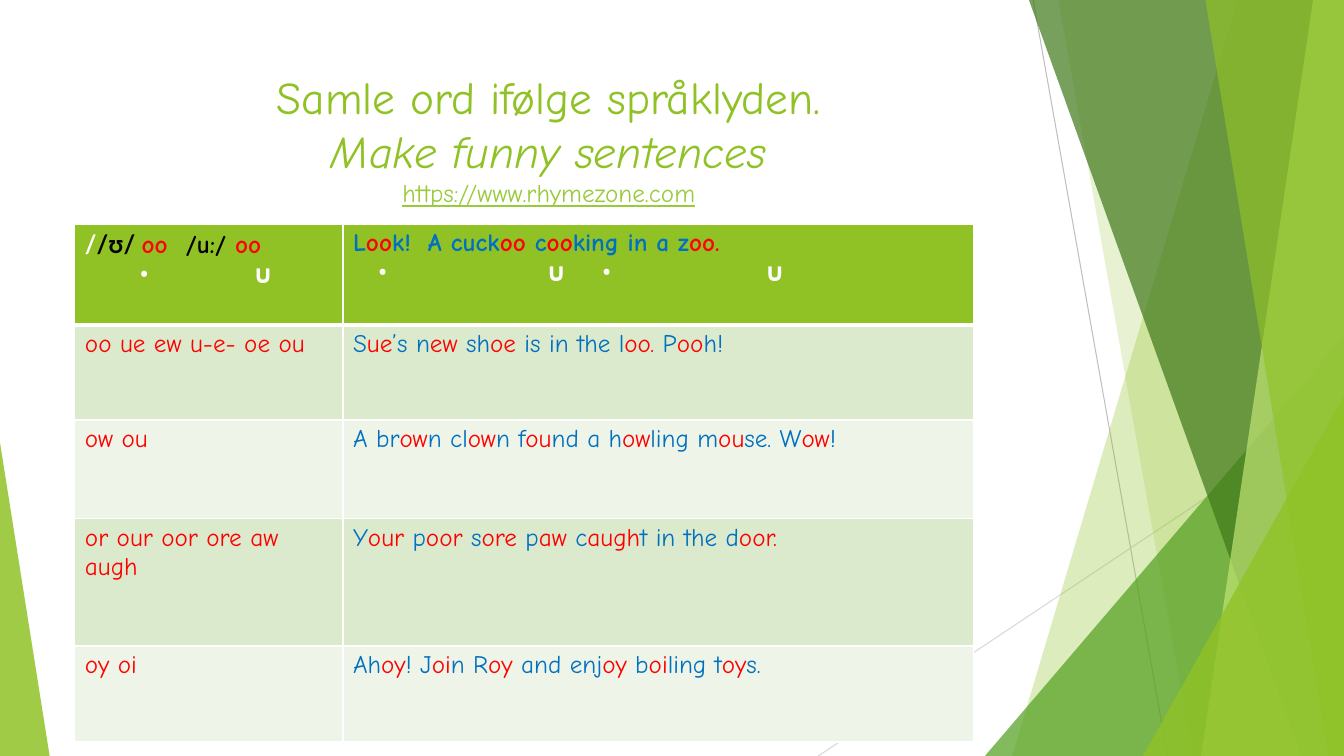
from lxml import etree
from pptx import Presentation
from pptx.dml.color import RGBColor
from pptx.enum import shapes, text
from pptx.oxml import ns
from pptx.util import Pt

GREEN = RGBColor(0x90, 0xC2, 0x26)
LEAF = RGBColor(0x54, 0xA0, 0x21)
FOREST = RGBColor(0x3F, 0x78, 0x19)
LIME = RGBColor(0xC0, 0xE4, 0x74)
LINK = RGBColor(0x99, 0xCA, 0x3C)
BAND_DARK = RGBColor(0xDB, 0xE9, 0xCD)
BAND_LIGHT = RGBColor(0xEE, 0xF4, 0xE8)
GREY = RGBColor(0xBF, 0xBF, 0xBF)
PALE_GREY = RGBColor(0xD9, 0xD9, 0xD9)
WHITE = RGBColor(0xFF, 0xFF, 0xFF)
BLACK = RGBColor(0, 0, 0)
RED = RGBColor(0xFF, 0, 0)
BLUE = RGBColor(0, 0x70, 0xC0)
HAND, MARKS, PHONETIC = "Comic Neue", "Roboto", "Lato"
WIDTH, HEIGHT = 960, 540

# Spellings, then a sentence in which every second piece is red
SOUNDS = [
    ("oo ue ew u-e- oe ou", "S|ue|’s n|ew| sh|oe| is in the l|oo. |P|oo|h!"),
    ("ow ou", "A br|ow|n cl|ow|n f|ou|nd a h|ow|ling m|ou|se. W|ow|!"),
    ("or our oor ore aw augh",
     "Y|our| p|oor| s|ore| p|aw| c|augh|t in the d|oor."),
    ("oy oi", "Ah|oy|! J|oi|n R|oy| and enj|oy| b|oi|ling t|oy|s."),
]


def add_child(parent, tag, **attributes):
    return etree.SubElement(parent, ns.qn(tag), attributes)


def paint(shape, color, opacity):
    shape.shadow.inherit = False
    shape.line.fill.background()
    shape.fill.solid()
    shape.fill.fore_color.rgb = color
    fill = shape._element.spPr.find(ns.qn("a:solidFill"))
    add_child(fill[0], "a:alpha", val=str(opacity * 1000))


def add_ray(page, start, end, color):
    ray = page.shapes.add_connector(
        shapes.MSO_CONNECTOR.STRAIGHT, *(Pt(v) for v in start + end))
    ray.line.color.rgb = color
    ray.line.width = Pt(0.75)
    add_child(ray._element.spPr, "a:effectLst")


def add_facet(page, top_x, bottom_x, color, opacity):
    """Fill from a slanted left edge to the right side of the slide."""
    builder = page.shapes.build_freeform(Pt(top_x), 0)
    builder.add_line_segments(
        [(Pt(WIDTH), 0), (Pt(WIDTH), Pt(HEIGHT)), (Pt(bottom_x), Pt(HEIGHT))])
    paint(builder.convert_to_shape(), color, opacity)


def add_corner(page, left, top, width, apex, color, opacity):
    """Place a right triangle that stands on the bottom of the slide."""
    corner = page.shapes.add_shape(
        shapes.MSO_SHAPE.ISOSCELES_TRIANGLE,
        Pt(left), Pt(top), Pt(width), Pt(HEIGHT - top))
    corner.adjustments[0] = apex
    paint(corner, color, opacity)


def add_backdrop(page):
    add_ray(page, (738, 0), (834, HEIGHT), GREY)
    add_ray(page, (WIDTH, 290), (584.5, HEIGHT), PALE_GREY)
    add_facet(page, 884, 723, GREEN, 30)
    add_facet(page, 756, 852, GREEN, 20)
    add_corner(page, 703.5, 240, 256.5, 1, LEAF, 72)
    add_facet(page, 735, 929.5, FOREST, 70)
    add_facet(page, 938, 858, LIME, 70)
    add_facet(page, 861, 949, GREEN, 65)
    add_corner(page, 816.5, 283, 143.5, 1, GREEN, 80)
    add_corner(page, 0, 316, 35.5, 0, GREEN, 85)


def add_span(para, words, color, font=None):
    span = para.add_run()
    span.text = words
    span.font.color.rgb = color
    if font:
        span.font.name = font
    return span


def add_title(page, left, top, width, height):
    box = page.shapes.add_textbox(Pt(left), Pt(top), Pt(width), Pt(height))
    frame = box.text_frame
    frame.word_wrap = True
    frame.vertical_anchor = text.MSO_ANCHOR.BOTTOM
    para = frame.paragraphs[0]
    para.alignment = text.PP_ALIGN.CENTER
    para.font.name = HAND
    para.font.size = Pt(32.4)
    add_span(para, "Samle ord ifølge språklyden.", GREEN)
    para.add_line_break()
    add_span(para, "Make funny sentences", GREEN).font.italic = True
    para.add_line_break()
    link = add_span(para, "https://www.rhymezone.com", LINK)
    link.font.size = Pt(18)
    link.font.underline = True


def style_line(para, font, bold=False, tabs=()):
    if tabs:
        stops = add_child(para._p.get_or_add_pPr(), "a:tabLst")
        for stop in tabs:
            add_child(stops, "a:tab", pos=str(int(Pt(stop))), algn="l")
    para.font.name = font
    para.font.size = Pt(18)
    para.font.bold = bold


def add_sentence(para, pieces):
    for index, piece in enumerate(pieces.split("|")):
        add_span(para, piece, RED if index % 2 else BLUE)


def add_marks(cell, marks, tabs):
    para = cell.text_frame.add_paragraph()
    style_line(para, MARKS, True, tabs)
    add_span(para, marks, WHITE)


def style_cell(cell, color, bottom=1):
    properties = cell._tc.get_or_add_tcPr()
    for side, width in (("L", 1), ("R", 1), ("T", 1), ("B", bottom)):
        edge = add_child(properties, f"a:ln{side}", w=str(int(Pt(width))))
        add_child(add_child(edge, "a:solidFill"), "a:srgbClr", val=str(WHITE))
    cell.fill.solid()
    cell.fill.fore_color.rgb = color


def fill_header(symbols, example):
    for cell in (symbols, example):
        style_cell(cell, GREEN, bottom=3)

    para = symbols.text_frame.paragraphs[0]
    style_line(para, HAND, True, [72])
    add_span(para, "/", WHITE, PHONETIC)
    add_span(para, "/ʊ/ ", BLACK, PHONETIC)
    add_span(para, "oo\t", RED)
    add_span(para, "/u:/ ", BLACK)
    add_span(para, "oo", RED)
    add_marks(symbols, "\t•\t∪", [39, 120])

    para = example.text_frame.paragraphs[0]
    style_line(para, HAND, True, [53.5])
    add_sentence(para, "L|oo|k!\tA cuck|oo| c|oo|king in a z|oo.")
    add_marks(example, "\t•\t∪\t•\t∪", [18, 138, 178, 294])


def add_sound_table(page, left, top, widths, heights):
    frame = page.shapes.add_table(
        len(heights), len(widths), Pt(left), Pt(top),
        Pt(sum(widths)), Pt(sum(heights)))
    table = frame.table
    for column, width in zip(table.columns, widths):
        column.width = Pt(width)
    for row, height in zip(table.rows, heights):
        row.height = Pt(height)

    fill_header(table.cell(0, 0), table.cell(0, 1))
    for row, (spellings, sentence) in enumerate(SOUNDS, 1):
        for column in range(2):
            cell = table.cell(row, column)
            style_cell(cell, BAND_DARK if row % 2 else BAND_LIGHT)
            para = cell.text_frame.paragraphs[0]
            style_line(para, HAND)
            if column == 0:
                add_span(para, spellings, RED)
            else:
                add_sentence(para, sentence)


def main():
    deck = Presentation()
    deck.slide_width, deck.slide_height = Pt(WIDTH), Pt(HEIGHT)
    page = deck.slides.add_slide(deck.slide_layouts[6])
    add_backdrop(page)
    add_title(page, 53.5, 48, 677, 104)
    add_sound_table(page, 53.5, 160, [191.5, 450.5], [72, 68, 70.5, 91, 68.5])
    deck.save("out.pptx")


if __name__ == "__main__":
    main()
